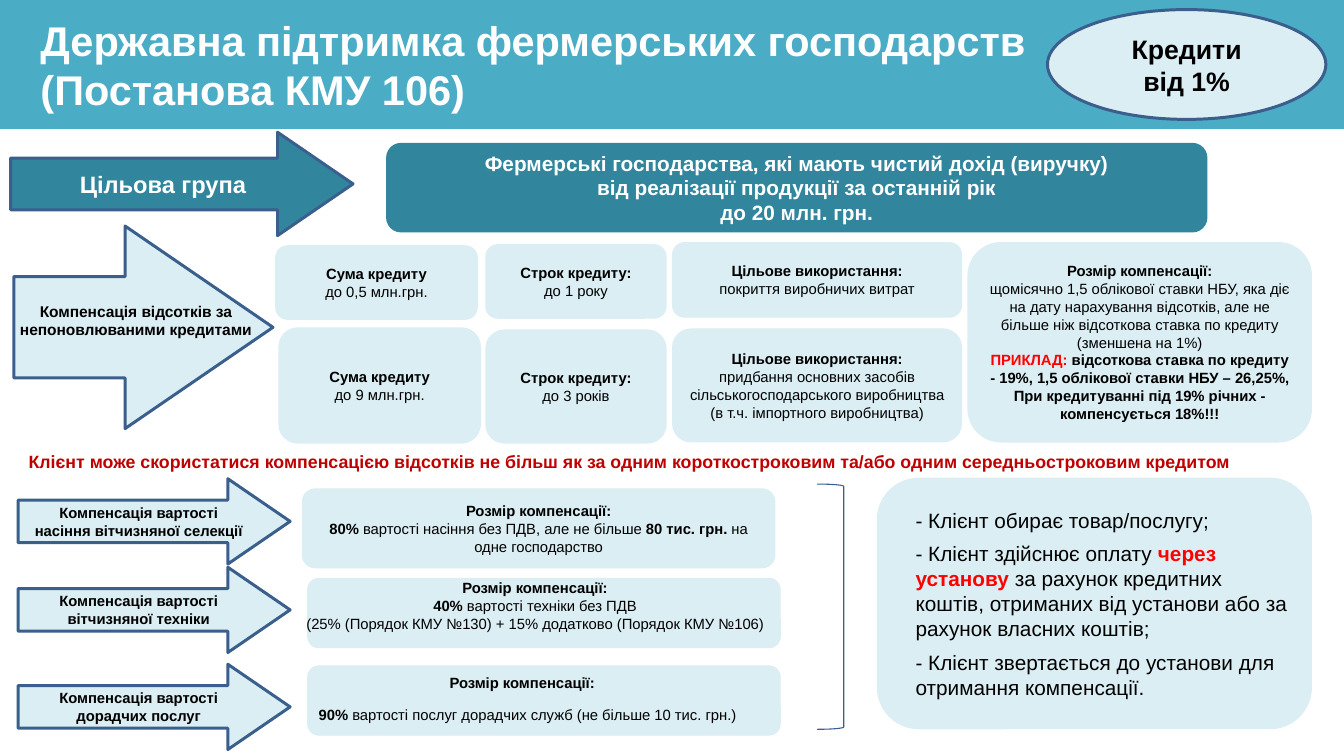
from dataclasses import dataclass

from pptx import Presentation
from pptx.dml.color import RGBColor
from pptx.enum.shapes import MSO_SHAPE
from pptx.enum.text import MSO_ANCHOR, PP_ALIGN
from pptx.util import Inches, Pt

RECT = MSO_SHAPE.RECTANGLE
ROUND = MSO_SHAPE.ROUNDED_RECTANGLE
ARROW = MSO_SHAPE.RIGHT_ARROW
OVAL = MSO_SHAPE.OVAL
BRACKET = MSO_SHAPE.RIGHT_BRACKET
LEFT, CENTER = PP_ALIGN.LEFT, PP_ALIGN.CENTER
MIDDLE, TOP = MSO_ANCHOR.MIDDLE, MSO_ANCHOR.TOP


@dataclass(frozen=True)
class Theme:
    font: str = "Arial"
    header: str = "4BACC6"
    teal: str = "31859C"
    pale: str = "DBEEF4"
    outline: str = "3A5F8C"
    bracket: str = "376092"
    white: str = "FFFFFF"
    black: str = "000000"
    accent: str = "FF0000"
    notice: str = "C00000"
    title_size: float = 28
    badge_size: float = 18
    group_size: float = 16
    text_size: float = 14
    notice_size: float = 12
    label_size: float = 10.5
    small_size: float = 10


T = Theme()
WIDE = (0.13, 0.06)
AMOUNT, TERM, PURPOSE = "Сума кредиту", "Строк кредиту:", "Цільове використання:"
COMPENSATION = "Розмір компенсації:"


def bold(text, color=None):
    return text, True, color


def plain(text):
    return text, False, None


def write(sp, paragraphs, size, color=T.black, align=CENTER, anchor=MIDDLE,
          insets=(0.1, 0.05), indent=0, gap=0, wrap=True):
    """Each paragraph is a list of (text, bold, colour) runs."""
    tf = sp.text_frame
    tf.word_wrap = wrap
    tf.vertical_anchor = anchor
    tf.margin_left = tf.margin_right = Inches(insets[0])
    tf.margin_top = tf.margin_bottom = Inches(insets[1])
    for i, runs in enumerate(paragraphs):
        p = tf.add_paragraph() if i else tf.paragraphs[0]
        p.alignment = align
        if indent:
            p._p.get_or_add_pPr().set("marL", str(Inches(indent)))
        if i and gap:
            p.space_before = Pt(gap)
        for text, is_bold, run_color in runs:
            r = p.add_run()
            r.text = text
            r.font.name = T.font
            r.font.size = Pt(size)
            r.font.bold = is_bold
            r.font.color.rgb = RGBColor.from_string(run_color or color)


def add_box(s, kind, at, fill=T.pale, line=None, line_width=2):
    sp = s.shapes.add_shape(kind, *map(Inches, at))
    sp.shadow.inherit = False
    if fill:
        sp.fill.solid()
        sp.fill.fore_color.rgb = RGBColor.from_string(fill)
    else:
        sp.fill.background()
    if line:
        sp.line.color.rgb = RGBColor.from_string(line)
        sp.line.width = Pt(line_width)
    else:
        sp.line.fill.background()
    return sp


def add_arrow(s, at, fill=T.pale):
    sp = add_box(s, ARROW, at, fill, T.outline)
    sp.adjustments[1] = 0.73
    return sp


def add_card(s, at, heading, *paragraphs):
    write(add_box(s, ROUND, at), [[bold(heading)], *paragraphs], T.small_size)


def add_text(s, at, paragraphs, size, **style):
    write(s.shapes.add_textbox(*map(Inches, at)), paragraphs, size,
          anchor=TOP, **style)


def add_header(s):
    write(add_box(s, RECT, (0, 0, 12.6, 1.21), T.header),
          [[bold("Державна підтримка фермерських господарств")],
           [bold("(Постанова КМУ 106)")]],
          T.title_size, T.white, LEFT, insets=WIDE, indent=0.25)
    write(add_box(s, OVAL, (9.82, 0.09, 2.61, 1.03), line=T.outline),
          [[bold("Кредити")], [bold("від 1%")]], T.badge_size)


def add_target_group(s):
    write(add_box(s, ROUND, (3.62, 1.34, 7.7, 0.84), T.teal),
          [[bold("Фермерські господарства, які мають чистий дохід (виручку)")],
           [bold("від реалізації продукції за останній рік")],
           [bold("до 20 млн. грн.")]],
          T.text_size, T.white, insets=WIDE)
    write(add_arrow(s, (0.1, 1.24, 3.21, 0.97), T.teal),
          [[bold("Цільова група")]], T.group_size, T.white, insets=WIDE)


def add_interest_section(s):
    add_arrow(s, (0.13, 2.12, 2.43, 1.9))
    add_text(s, (0, 2.78, 2.55, 0.45),
             [[bold("Компенсація відсотків за непоновлюваними кредитами")]],
             T.label_size)

    # Short-term loans above, medium-term loans below
    cards = [
        ((2.58, 2.3, 1.9, 0.7), AMOUNT, ["до 0,5 млн.грн."]),
        ((4.55, 2.29, 1.7, 0.7), TERM, ["до 1 року"]),
        ((6.3, 2.27, 2.72, 0.71), PURPOSE, ["покриття виробничих витрат"]),
        ((2.61, 3.07, 1.9, 1.09), AMOUNT, ["до 9 млн.грн."]),
        ((4.55, 3.09, 1.7, 1.07), TERM, ["до 3 років"]),
        ((6.3, 3.08, 2.72, 1.07), PURPOSE,
         ["придбання основних засобів сільськогосподарського виробництва",
          "(в т.ч. імпортного виробництва)"]),
    ]
    for at, heading, lines in cards:
        add_card(s, at, heading, *[[plain(line)] for line in lines])

    add_card(s, (9.07, 2.27, 3.23, 1.88), COMPENSATION,
             [plain("щомісячно 1,5 облікової ставки НБУ, яка діє на дату "
                    "нарахування відсотків, але не більше ніж відсоткова "
                    "ставка по кредиту (зменшена на 1%)")],
             [bold("ПРИКЛАД:", T.accent),
              bold(" відсоткова ставка по кредиту - 19%, "
                   "1,5 облікової ставки НБУ – 26,25%,")],
             [bold("При кредитуванні під 19% річних - компенсується 18%!!!")])
    add_text(s, (0.17, 4.18, 12.26, 0.3),
             [[bold("Клієнт може скористатися компенсацією відсотків не більш "
                    "як за одним короткостроковим та/або одним "
                    "середньостроковим кредитом")]],
             T.notice_size, color=T.notice, align=LEFT)


def add_cost_section(s):
    for top, subject in [(4.49, "насіння вітчизняної селекції"),
                         (5.32, "вітчизняної техніки"),
                         (6.23, "дорадчих послуг")]:
        write(add_arrow(s, (0.17, top, 2.55, 0.8)),
              [[bold(f"Компенсація вартості {subject}")]],
              T.small_size, insets=WIDE)

    # Seeds
    add_card(s, (2.83, 4.58, 4.44, 0.75), COMPENSATION,
             [bold("80%"), plain(" вартості насіння без ПДВ, але не більше "),
              bold("80 тис. грн."), plain(" на одне господарство")])
    # Machinery and advisory services
    for top in (5.42, 6.24):
        add_box(s, ROUND, (2.88, top, 4.44, 0.66))
    add_text(s, (2.74, 5.38, 4.55, 0.61),
             [[bold(COMPENSATION)],
              [bold("40% "), plain("вартості техніки без ПДВ")],
              [plain("(25% (Порядок КМУ №130) + 15% додатково "
                     "(Порядок КМУ №106)")]], T.small_size)
    add_text(s, (2.62, 6.27, 4.55, 0.27), [[bold(COMPENSATION)]], T.small_size)
    add_text(s, (2.86, 6.57, 4.17, 0.27),
             [[bold("90% "), plain("вартості послуг дорадчих служб "
                                   "(не більше 10 тис. грн.)")]],
             T.small_size, wrap=False)


def add_procedure(s):
    add_box(s, BRACKET, (7.66, 4.54, 0.25, 2.3), None, T.bracket, 0.75)
    write(add_box(s, ROUND, (8.22, 4.48, 4.08, 2.36)),
          [[plain("- Клієнт обирає товар/послугу;")],
           [plain("- Клієнт здійснює оплату "),
            bold("через установу ", T.accent),
            plain("за рахунок кредитних коштів, отриманих від установи або "
                  "за рахунок власних коштів;")],
           [plain("- Клієнт звертається до установи для отримання "
                  "компенсації.")]],
          T.text_size, align=LEFT, indent=0.15, gap=6)


def main():
    prs = Presentation()
    prs.slide_width, prs.slide_height = Inches(12.6), Inches(7.09)
    s = prs.slides.add_slide(prs.slide_layouts[6])
    add_header(s)
    add_target_group(s)
    add_interest_section(s)
    add_cost_section(s)
    add_procedure(s)
    prs.save("out.pptx")


if __name__ == "__main__":
    main()
